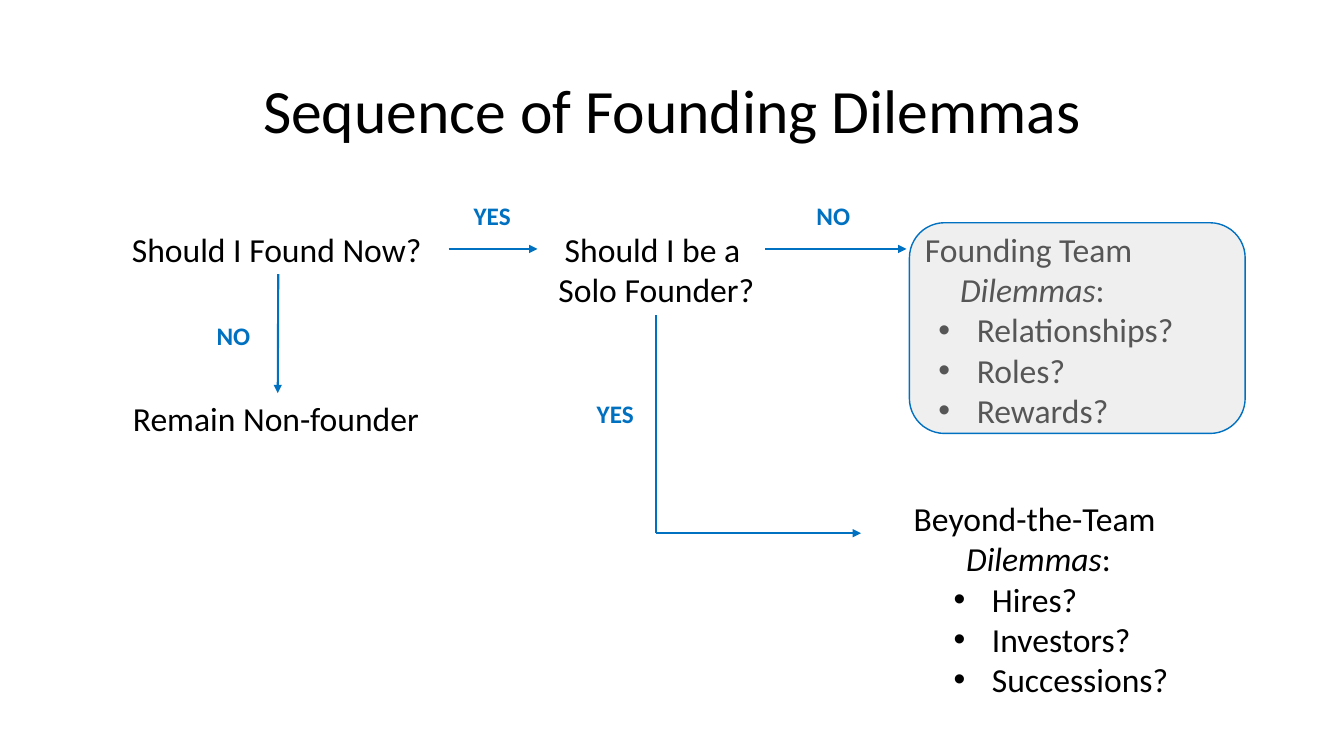
from lxml import etree
from pptx import Presentation
from pptx.dml.color import RGBColor
from pptx.enum.shapes import MSO_CONNECTOR, MSO_SHAPE
from pptx.enum.text import MSO_ANCHOR, MSO_AUTO_SIZE, PP_ALIGN
from pptx.oxml.ns import qn
from pptx.util import Pt

PX = 9144
FONT = "Calibri"
COLORS = {"text": "000000", "accent": "0070C0", "veil": "D9D9D9"}
LEFT, CENTER = PP_ALIGN.LEFT, PP_ALIGN.CENTER
MIDDLE = MSO_ANCHOR.MIDDLE
FIT_TEXT = MSO_AUTO_SIZE.SHAPE_TO_FIT_TEXT
STRAIGHT = MSO_CONNECTOR.STRAIGHT
ROUNDED = MSO_SHAPE.ROUNDED_RECTANGLE
TOP_SIDE, BOTTOM_SIDE = 0, 2


def px(*lengths):
    return [length * PX for length in lengths]


def color(name):
    return RGBColor.from_string(COLORS[name])


def add_span(para, text, size=24, name="text", bold=False, italic=False):
    span = para.add_run()
    span.text = text
    span.font.name = FONT
    span.font.size = Pt(size)
    span.font.bold = bold
    span.font.italic = italic
    span.font.color.rgb = color(name)


def add_title(page, text, *place):
    title = page.shapes.title
    title.left, title.top, title.width, title.height = px(*place)
    title.text_frame.vertical_anchor = MIDDLE
    para = title.text_frame.paragraphs[0]
    para.alignment = CENTER
    para.line_spacing = 0.9
    add_span(para, text, 44)


def add_box(page, *place):
    box = page.shapes.add_textbox(*px(*place))
    box.text_frame.word_wrap = False
    box.text_frame.auto_size = FIT_TEXT
    return box


def add_step(page, lines, *place):
    box = add_box(page, *place)
    para = box.text_frame.paragraphs[0]
    para.alignment = CENTER if len(lines) > 1 else LEFT
    for index, line in enumerate(lines):
        if index:
            para.add_line_break()
        add_span(para, line)
    return box


def add_answer(page, text, left, top):
    width = 57 if text == "YES" else 54
    box = add_box(page, left, top, width, 40)
    add_span(box.text_frame.paragraphs[0], text, 18, "accent", bold=True)


def set_bullet(para):
    para.level = 1
    properties = para._p.get_or_add_pPr()
    properties.set("marL", str(88 * PX))
    properties.set("indent", str(-38 * PX))
    etree.SubElement(properties, qn("a:buFont"), typeface="Arial")
    etree.SubElement(properties, qn("a:buChar"), char="•")


def add_dilemmas(page, heading, items, *place):
    frame = add_box(page, *place).text_frame
    para = frame.paragraphs[0]
    para.alignment = CENTER
    add_span(para, heading)
    para.add_line_break()
    add_span(para, "Dilemmas", italic=True)
    add_span(para, ":")
    for item in items:
        para = frame.add_paragraph()
        set_bullet(para)
        add_span(para, item)


def add_line(page, start, end, arrow=True):
    line = page.shapes.add_connector(STRAIGHT, *px(*start, *end))
    line.line.color.rgb = color("accent")
    line.line.width = Pt(1.5)
    if arrow:
        etree.SubElement(line.line._get_or_add_ln(), qn("a:tailEnd"), type="triangle")
    etree.SubElement(line._element.spPr, qn("a:effectLst"))
    return line


def add_veil(page, *place):
    veil = page.shapes.add_shape(ROUNDED, *px(*place))
    veil.shadow.inherit = False
    veil.fill.solid()
    veil.fill.fore_color.rgb = color("veil")
    shade = veil._element.spPr.find(qn("a:solidFill"))[0]
    etree.SubElement(shade, qn("a:alpha"), val="40000")
    veil.line.color.rgb = color("accent")
    veil.line.width = Pt(1)


def main():
    """Build the slide with the sequence of founding dilemmas."""
    deck = Presentation()
    deck.slide_width, deck.slide_height = px(1333, 750)
    page = deck.slides.add_slide(deck.slide_layouts[5])
    add_title(page, "Sequence of Founding Dilemmas", 92, 40, 1150, 145)

    found = add_step(page, ["Should I Found Now?"], 121, 222, 310, 50)
    remain = add_step(page, ["Remain Non-founder"], 122, 390, 307, 50)
    solo = add_step(page, ["Should I be a ", "Solo Founder?"], 543, 222, 216, 91)
    add_dilemmas(page, "Founding Team ", ["Relationships?", "Roles?", "Rewards?"],
                 871, 222, 306, 212)
    add_dilemmas(page, "Beyond-the-Team ", ["Hires?", "Investors?", "Successions?"],
                 886, 489, 288, 212)

    stop = add_line(page, (276, 273), (275, 390))
    stop.begin_connect(found, BOTTOM_SIDE)
    stop.end_connect(remain, TOP_SIDE)
    add_line(page, (445, 247), (533, 247))
    add_line(page, (759, 247), (899, 247))
    corner = (651, 529)
    descent = add_line(page, (651, 313), corner, arrow=False)
    descent.begin_connect(solo, BOTTOM_SIDE)
    add_line(page, corner, (854, 529))

    for text, left, top in [("YES", 460, 194), ("NO", 205, 313),
                            ("NO", 800, 194), ("YES", 582, 390)]:
        add_answer(page, text, left, top)
    add_veil(page, 902, 221, 333, 209)
    deck.save("out.pptx")


if __name__ == "__main__":
    main()
